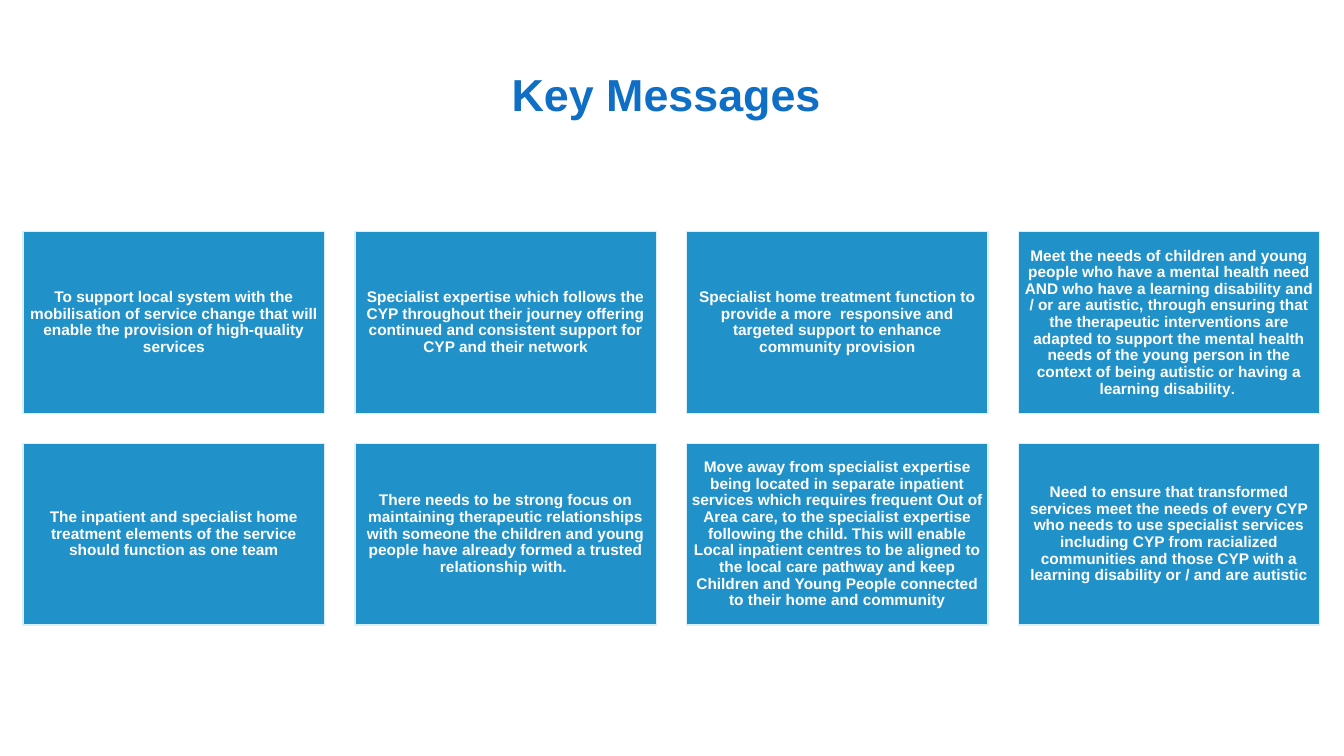
import pptx
import pptx.util
import pptx.dml.color
import pptx.enum.shapes
import pptx.enum.text

Inches = pptx.util.Inches
Pt = pptx.util.Pt

TITLE = "Key Messages "
CARDS = [
    ["To support local system with the mobilisation of service change that will enable the provision of high-quality services"],
    ["Specialist expertise which follows the CYP throughout their journey offering continued and consistent support for CYP and their network"],
    ["Specialist home treatment function to provide a more  responsive and targeted support to enhance community provision"],
    ["Meet the needs of children and young people who have a mental health need AND who have a learning disability and / or are autistic, through ensuring that the therapeutic interventions are adapted to support the mental health needs of the young person in the context of being autistic or having a learning disability", ". "],
    ["The inpatient and specialist home treatment elements of the service should function as one team"],
    ["There needs to be strong focus on maintaining therapeutic relationships with someone the children and young people have already formed a trusted relationship with. "],
    ["Move away from specialist expertise being located in separate inpatient services which requires frequent Out of Area care, to the specialist expertise following the child. This will enable Local inpatient centres to be aligned to the local care pathway and keep Children and Young People connected to their home and community"],
    ["Need to ensure that transformed services meet the needs of every CYP who needs to use specialist services including CYP from racialized communities and those CYP with a learning disability or / and are autistic"],
]
FONTS = ["Arial", "Calibri"]
COLORS = {"title": "0F6FC6", "card": "2191C9", "edge": "DBEFF9", "text": "FFFFFF"}
COLS = 4
LEFT, TOP = 0.23, 2.3
WIDTH, HEIGHT = 2.99, 1.8
GAP = 0.3


def color(name):
    return pptx.dml.color.RGBColor.from_string(COLORS[name])


def write(frame, parts, size, tone):
    frame.word_wrap = True
    frame.vertical_anchor = pptx.enum.text.MSO_ANCHOR.MIDDLE
    para = frame.paragraphs[0]
    para.alignment = pptx.enum.text.PP_ALIGN.CENTER
    para.line_spacing = 0.9
    for part, face in zip(parts, FONTS):
        run = para.add_run()
        run.text = part
        run.font.name = face
        run.font.size = Pt(size)
        run.font.bold = True
        run.font.color.rgb = color(tone)


def card(slide, index, parts):
    row, col = divmod(index, COLS)
    box = slide.shapes.add_shape(
        pptx.enum.shapes.MSO_SHAPE.RECTANGLE,
        Inches(LEFT + col * (WIDTH + GAP)), Inches(TOP + row * (HEIGHT + GAP)),
        Inches(WIDTH), Inches(HEIGHT))
    box.shadow.inherit = False
    box.fill.solid()
    box.fill.fore_color.rgb = color("card")
    box.line.color.rgb = color("edge")
    box.line.width = Pt(1)
    frame = box.text_frame
    frame.margin_left = frame.margin_right = Inches(0.05)
    frame.margin_top = frame.margin_bottom = Inches(0.05)
    write(frame, parts, 11, "text")


def main():
    deck = pptx.Presentation()
    deck.slide_width = Inches(13.33)
    deck.slide_height = Inches(7.5)
    slide = deck.slides.add_slide(deck.slide_layouts[6])
    head = slide.shapes.add_textbox(Inches(0.92), Inches(0.61), Inches(11.5), Inches(0.71))
    write(head.text_frame, [TITLE], 32, "title")
    for index, parts in enumerate(CARDS):
        card(slide, index, parts)
    deck.save("out.pptx")


if __name__ == "__main__":
    main()
